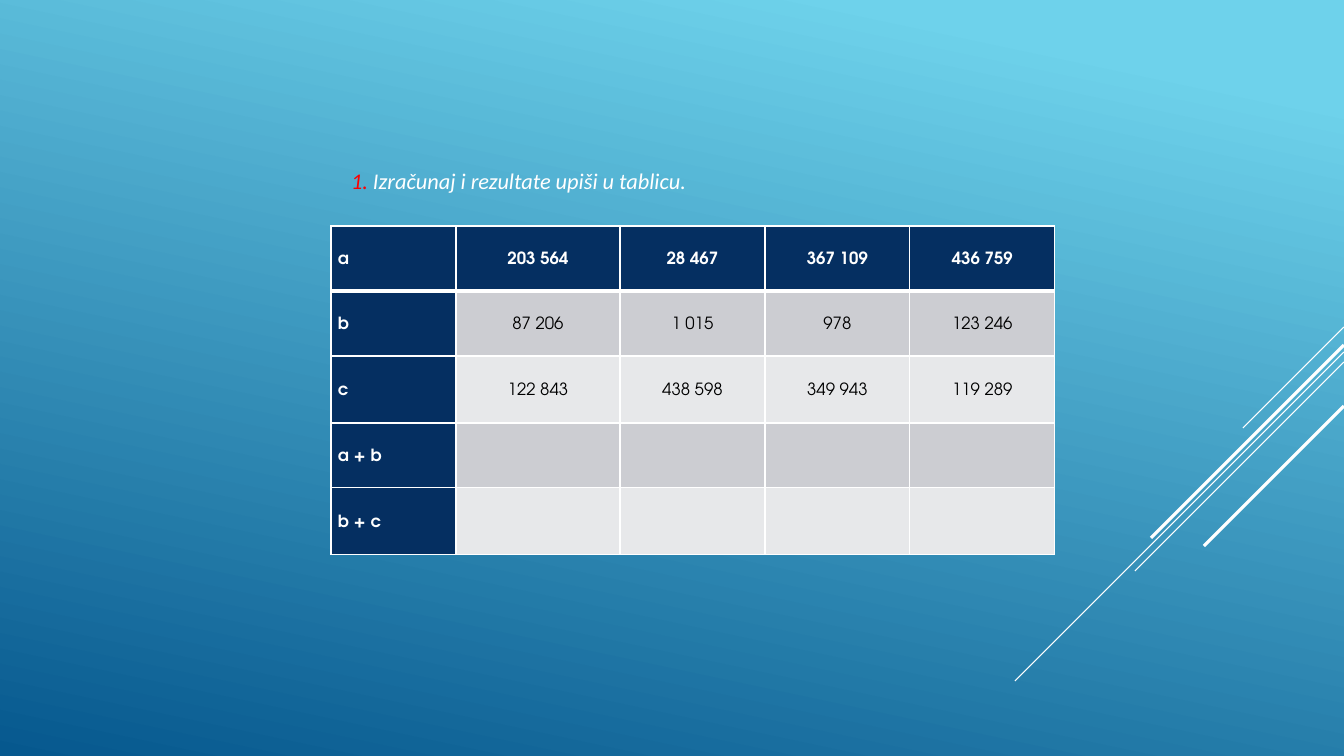
"""Build a slide with a maths exercise table on a blue gradient."""
import pptx
import pptx.util
import pptx.dml.color
import pptx.enum.shapes
import pptx.enum.text
import pptx.oxml

SCALE = 914400 / 100.8
WHITE, NAVY, RED, BLACK = "FFFFFF", "052F61", "FF0000", "000000"
BANDS = ["CCCDD2", "E7E8EA"]
NS = "http://schemas.openxmlformats.org/drawingml/2006/main"
ROWS = [
    ["a", "203 564", "28 467", "367 109", "436 759"],
    ["b", "87 206", "1 015", "978", "123 246"],
    ["c", "122 843", "438 598", "349 943", "119 289"],
    ["a + b", "", "", "", ""],
    ["b + c", "", "", "", ""],
]
WIDTHS = [125, 164, 145, 145, 145]
HEIGHTS = [65, 65, 67, 65, 67]
RAYS = [(327, 1243, 0.75), (352, 1015, 0.75), (362, 1135, 0.75),
        (345, 1151, 2.25), (406, 1204, 2.25)]


def px(num):
    return pptx.util.Emu(round(num * SCALE))


def color(code):
    return pptx.dml.color.RGBColor.from_string(code)


class Page:
    """Slide with its fonts and drawing methods."""

    def __init__(self, deck):
        self.slide = deck.slides.add_slide(deck.slide_layouts[6])
        self.shapes = self.slide.shapes
        self.body = "TeX Gyre Adventor"
        self.lead = "Calibri"

    def back(self, stops, angle):
        fill = self.slide.background.fill
        fill.gradient()
        fill.gradient_angle = angle
        for stop, (place, code) in zip(fill.gradient_stops, stops):
            stop.position = place
            stop.color.rgb = color(code)

    def line(self, x1, y1, x2, y2, weight):
        kind = pptx.enum.shapes.MSO_CONNECTOR.STRAIGHT
        line = self.shapes.add_connector(kind, px(x1), px(y1), px(x2), px(y2))
        line.line.color.rgb = color(WHITE)
        line.line.width = pptx.util.Pt(weight)
        props = line._element.spPr
        props.append(pptx.oxml.parse_xml(f'<a:effectLst xmlns:a="{NS}"/>'))

    def run(self, para, text, font, size, code, bold=False, italic=False):
        run = para.add_run()
        run.text = text
        run.font.name = font
        run.font.size = pptx.util.Pt(size)
        run.font.color.rgb = color(code)
        run.font.bold = bold
        run.font.italic = italic

    def text(self, x, y, w, h, runs):
        frame = self.shapes.add_textbox(px(x), px(y), px(w), px(h)).text_frame
        frame.word_wrap = True
        frame.vertical_anchor = pptx.enum.text.MSO_ANCHOR.TOP
        frame.margin_left = px(20)
        frame.margin_top = px(8)
        for text, code in runs:
            self.run(frame.paragraphs[0], text, self.lead, 16, code, italic=True)

    def edge(self, cell, side, weight):
        cell._tc.get_or_add_tcPr().append(pptx.oxml.parse_xml(
            f'<a:{side} xmlns:a="{NS}" w="{weight * 12700}"><a:solidFill>'
            f'<a:srgbClr val="{WHITE}"/></a:solidFill></a:{side}>'))

    def cell(self, cell, text, row, col):
        head = row == 0 or col == 0
        cell.margin_left = cell.margin_right = px(7)
        cell.margin_top = cell.margin_bottom = 0
        cell.vertical_anchor = pptx.enum.text.MSO_ANCHOR.MIDDLE
        self.edge(cell, "lnL", 1)
        self.edge(cell, "lnR", 1)
        self.edge(cell, "lnT", 3 if row == 1 else 1)
        self.edge(cell, "lnB", 3 if row == 0 else 1)
        cell.fill.solid()
        cell.fill.fore_color.rgb = color(NAVY if head else BANDS[(row - 1) % 2])
        if text:
            para = cell.text_frame.paragraphs[0]
            para.line_spacing = 1.15
            para.space_after = pptx.util.Pt(10)
            align = pptx.enum.text.PP_ALIGN
            para.alignment = align.CENTER if col else align.LEFT
            self.run(para, text, self.body, 12, WHITE if head else BLACK, head)

    def table(self, x, y, rows, widths, heights):
        table = self.shapes.add_table(
            len(rows), len(widths), px(x), px(y),
            px(sum(widths)), px(sum(heights))).table
        table.first_col = True
        for col, width in zip(table.columns, widths):
            col.width = px(width)
        for row, height in zip(table.rows, heights):
            row.height = px(height)
        for r, row in enumerate(rows):
            for c, text in enumerate(row):
                self.cell(table.cell(r, c), text, r, c)


def main():
    deck = pptx.Presentation()
    deck.slide_width, deck.slide_height = px(1344), px(756)
    page = Page(deck)
    page.back([(0.1, "6ED2EB"), (1, "06588E")], 258)
    for top, left, weight in RAYS:
        page.line(1344, top, left, top + 1344 - left, weight)
    page.table(331, 226, ROWS, WIDTHS, HEIGHTS)
    page.text(331, 159, 572, 68, [
        ("1.", RED), (" Izračunaj i rezultate upiši u tablicu.", WHITE)])
    deck.save("out.pptx")


if __name__ == "__main__":
    main()
